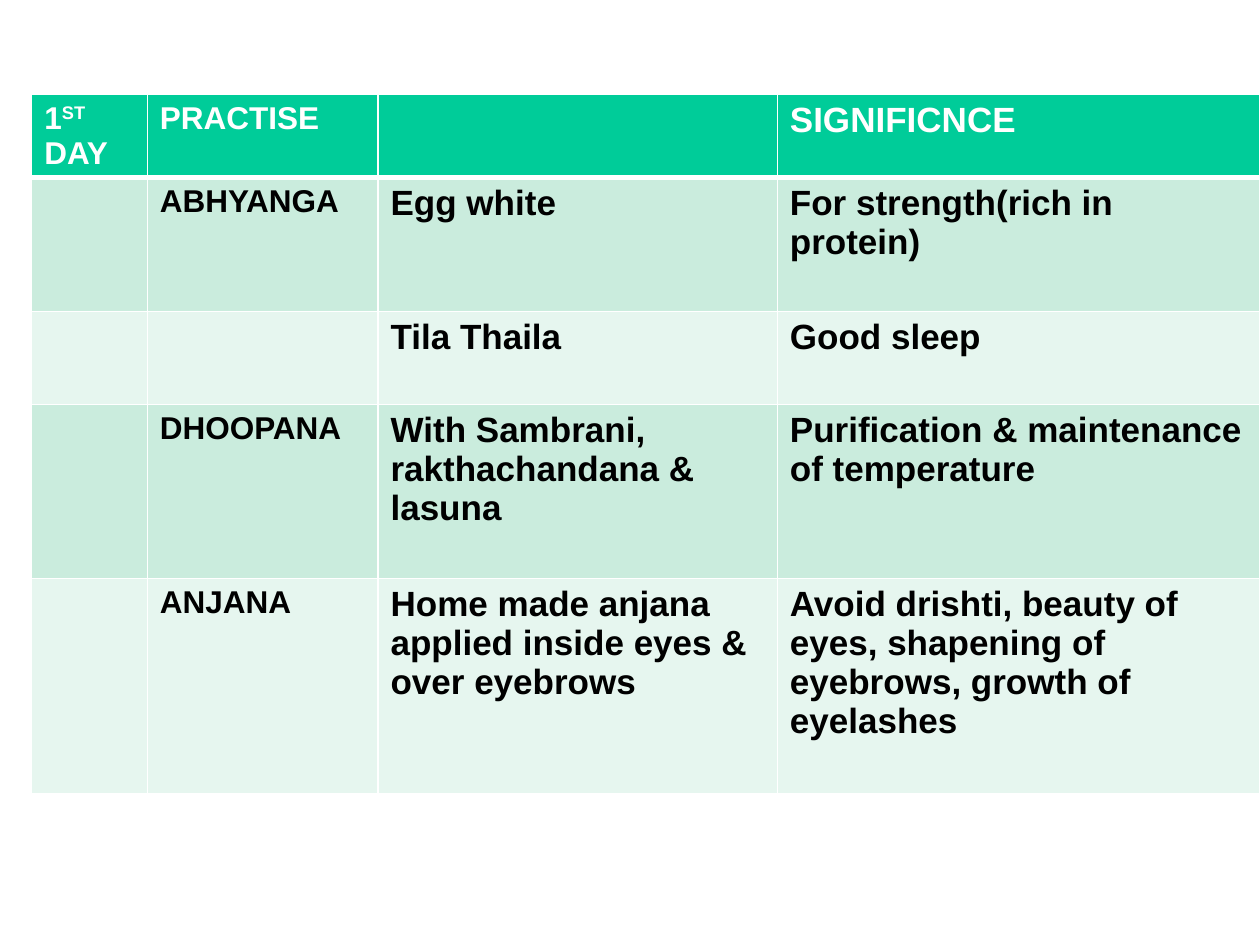
from lxml.etree import SubElement
from pptx import Presentation
from pptx.dml.color import RGBColor
from pptx.oxml.ns import qn
from pptx.util import Cm, Pt

THEME = {
    "font": "Arial",
    "header_fill": "00CC99",
    "band_fills": ("CAECDD", "E6F6EF"),
    "header_text": "FFFFFF",
    "body_text": "000000",
    "border": "FFFFFF",
    "label_size": 18,
    "detail_size": 20,
}

# A cell is a list of (text, superscript) runs or a plain string.
PRACTICES = [
    ([("1", False), ("ST", True), (" DAY", False)], "PRACTISE", "", "SIGNIFICNCE"),
    ("", "ABHYANGA", "Egg white", "For strength(rich in protein)"),
    ("", "", "Tila Thaila", "Good sleep"),
    ("", "DHOOPANA", "With Sambrani, rakthachandana & lasuna",
     "Purification & maintenance of temperature"),
    ("", "ANJANA", "Home made anjana applied inside eyes & over eyebrows",
     "Avoid drishti, beauty of eyes, shapening of eyebrows, growth of eyelashes"),
]
COLUMN_WIDTHS = (2.33, 4.65, 8.05, 9.73)
ROW_HEIGHTS = (1.07, 2.7, 1.88, 3.5, 4.35)
LEFT, TOP = 0.64, 1.9
LABEL_COLUMNS = 2


def set_borders(cell, widths):
    """Draw the cell's borders; widths maps a side tag to points."""
    properties = cell._tc.get_or_add_tcPr()
    for side, width in widths.items():
        line = SubElement(properties, qn(f"a:{side}"), w=str(Pt(width)))
        fill = SubElement(line, qn("a:solidFill"))
        SubElement(fill, qn("a:srgbClr"), val=THEME["border"])


def write_runs(cell, content, font_format, color):
    paragraph = cell.text_frame.paragraphs[0]
    runs = [(content, False)] if isinstance(content, str) else content
    for text, superscript in runs:
        if not text:
            continue
        run = paragraph.add_run()
        run.text = text
        for attribute, value in font_format.items():
            setattr(run.font, attribute, value)
        run.font.color.rgb = RGBColor.from_string(color)
        if superscript:
            run._r.get_or_add_rPr().set("baseline", "30000")


def fill_cell(cell, content, row, column):
    is_header = row == 0
    set_borders(cell, {"lnL": 1, "lnR": 1, "lnT": 3 if row == 1 else 1,
                       "lnB": 3 if is_header else 1})
    fill = THEME["header_fill"] if is_header else THEME["band_fills"][(row - 1) % 2]
    cell.fill.solid()
    cell.fill.fore_color.rgb = RGBColor.from_string(fill)
    size = THEME["label_size" if column < LABEL_COLUMNS else "detail_size"]
    font_format = {"name": THEME["font"], "size": Pt(size), "bold": True}
    write_runs(cell, content, font_format,
               THEME["header_text" if is_header else "body_text"])


def main():
    deck = Presentation()
    deck.slide_width, deck.slide_height = Cm(25.4), Cm(19.05)
    slide = deck.slides.add_slide(deck.slide_layouts[6])
    practice_table = slide.shapes.add_table(
        len(PRACTICES), len(COLUMN_WIDTHS), Cm(LEFT), Cm(TOP),
        Cm(sum(COLUMN_WIDTHS)), Cm(sum(ROW_HEIGHTS))).table
    for column, width in zip(practice_table.columns, COLUMN_WIDTHS):
        column.width = Cm(width)
    for row, height in zip(practice_table.rows, ROW_HEIGHTS):
        row.height = Cm(height)
    for row, practice in enumerate(PRACTICES):
        for column, content in enumerate(practice):
            fill_cell(practice_table.cell(row, column), content, row, column)
    deck.save("out.pptx")


if __name__ == "__main__":
    main()
